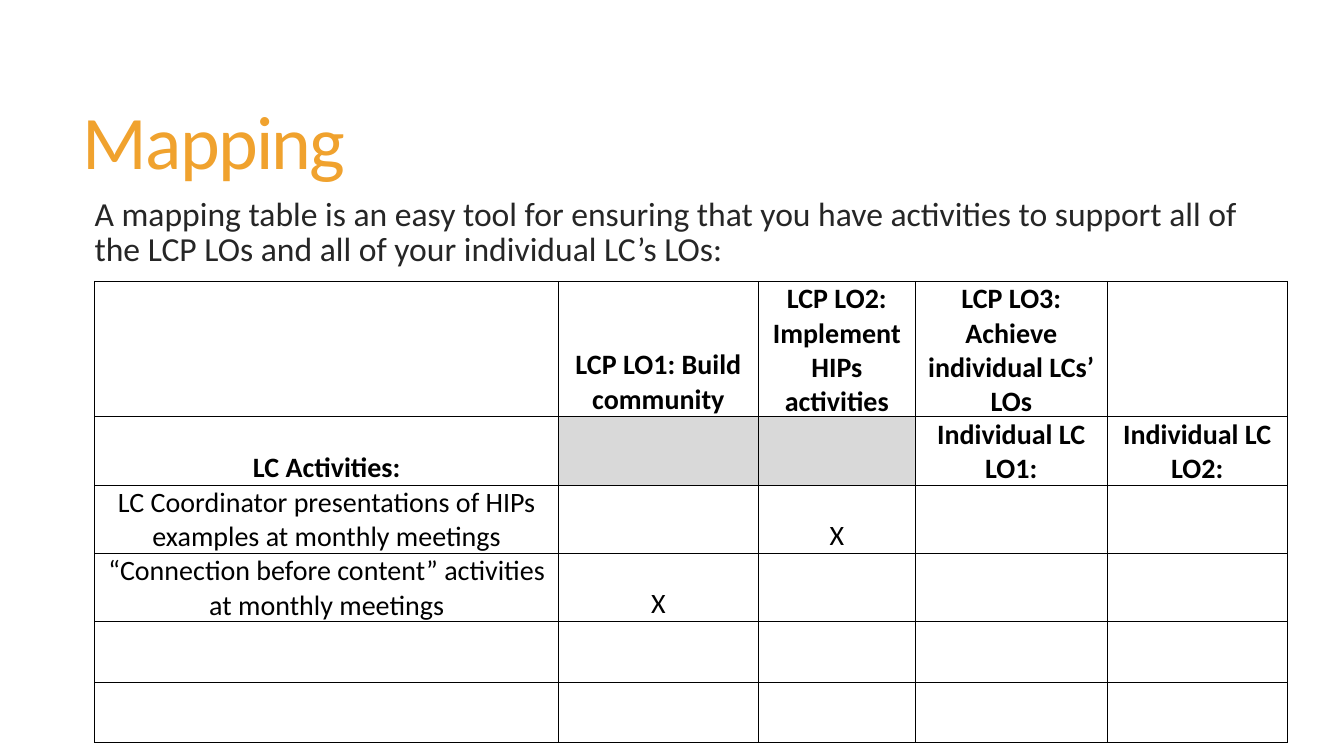
from dataclasses import dataclass

from lxml import etree
from pptx import Presentation
from pptx import util as u
from pptx.dml.color import RGBColor
from pptx.enum import text
from pptx.oxml import ns

PX = 9144  # 100 px to the inch


@dataclass(frozen=True)
class Theme:
    font: str = "Calibri"
    title: RGBColor = RGBColor.from_string("F0A22E")
    body: RGBColor = RGBColor.from_string("262626")
    ink: RGBColor = RGBColor.from_string("000000")
    shade: RGBColor = RGBColor.from_string("D9D9D9")
    title_size: int = 54
    body_size: int = 24
    table_size: int = 20


theme = Theme()


def style(para, size, color, bold=False):
    for span in para.runs:
        span.font.name = theme.font
        span.font.size = u.Pt(size)
        span.font.color.rgb = color
        span.font.bold = bold


def add_borders(cell):
    """Draw a thin line on all four sides of a table cell."""
    props = cell._tc.get_or_add_tcPr()
    for position, side in enumerate(("lnL", "lnR", "lnT", "lnB")):
        line = etree.Element(ns.qn(f"a:{side}"), w=str(u.Pt(0.5)))
        fill = etree.SubElement(line, ns.qn("a:solidFill"))
        etree.SubElement(fill, ns.qn("a:srgbClr"), val=str(theme.ink))
        props.insert(position, line)


deck = Presentation()
deck.slide_width = 1333 * PX
deck.slide_height = 750 * PX
page = deck.slides.add_slide(deck.slide_layouts[6])

# Title
box = page.shapes.add_textbox(72 * PX, 55 * PX, 1178 * PX, 181 * PX)
box.text_frame.word_wrap = True
box.text_frame.vertical_anchor = text.MSO_ANCHOR.MIDDLE
para = box.text_frame.paragraphs[0]
para.text = "Mapping"
para.line_spacing = 0.85
style(para, theme.title_size, theme.title)
para.runs[0].font._element.set("spc", "-120")

# Introduction
box = page.shapes.add_textbox(74 * PX, 193 * PX, 1176 * PX, 85 * PX)
box.text_frame.word_wrap = True
para = box.text_frame.paragraphs[0]
para.text = (
    "A mapping table is an easy tool for ensuring that you have activities "
    "to support all of the LCP LOs and all of your individual LC’s LOs:"
)
para.line_spacing = 0.85
para.space_before = u.Pt(13)
para._p.get_or_add_pPr().set("marL", str(10 * PX))
style(para, theme.body_size, theme.body)

# Mapping table
column_widths = [460, 198, 156, 190, 179]
row_heights = [122, 61, 60, 60, 60, 60]
heading_rows = 2
shaded_cells = {(1, 1), (1, 2)}
rows = [
    ["", "LCP LO1: Build community", "LCP LO2: Implement HIPs activities",
     "LCP LO3:\nAchieve individual LCs’ LOs", ""],
    ["LC Activities:", "", "", "Individual LC LO1:", "Individual LC LO2:"],
    ["LC Coordinator presentations of HIPs examples at monthly meetings", "", "X", "", ""],
    ["“Connection before content” activities at monthly meetings", "X", "", "", ""],
    [""] * 5,
    [""] * 5,
]

table = page.shapes.add_table(
    len(rows), len(column_widths), 94 * PX, 279 * PX,
    sum(column_widths) * PX, sum(row_heights) * PX,
).table
table.first_row = False
table.horz_banding = False
for column, width in zip(table.columns, column_widths):
    column.width = width * PX
for row, height in zip(table.rows, row_heights):
    row.height = height * PX

for r, labels in enumerate(rows):
    for c, label in enumerate(labels):
        cell = table.cell(r, c)
        if (r, c) in shaded_cells:
            cell.fill.solid()
            cell.fill.fore_color.rgb = theme.shade
        else:
            cell.fill.background()
        add_borders(cell)
        if not label:
            continue
        cell.text_frame.text = label
        cell.vertical_anchor = text.MSO_ANCHOR.BOTTOM
        cell.margin_left = cell.margin_right = cell.margin_top = 1 * PX
        cell.margin_bottom = 0
        for para in cell.text_frame.paragraphs:
            para.alignment = text.PP_ALIGN.CENTER
            style(para, theme.table_size, theme.ink, bold=r < heading_rows)

deck.save("out.pptx")
